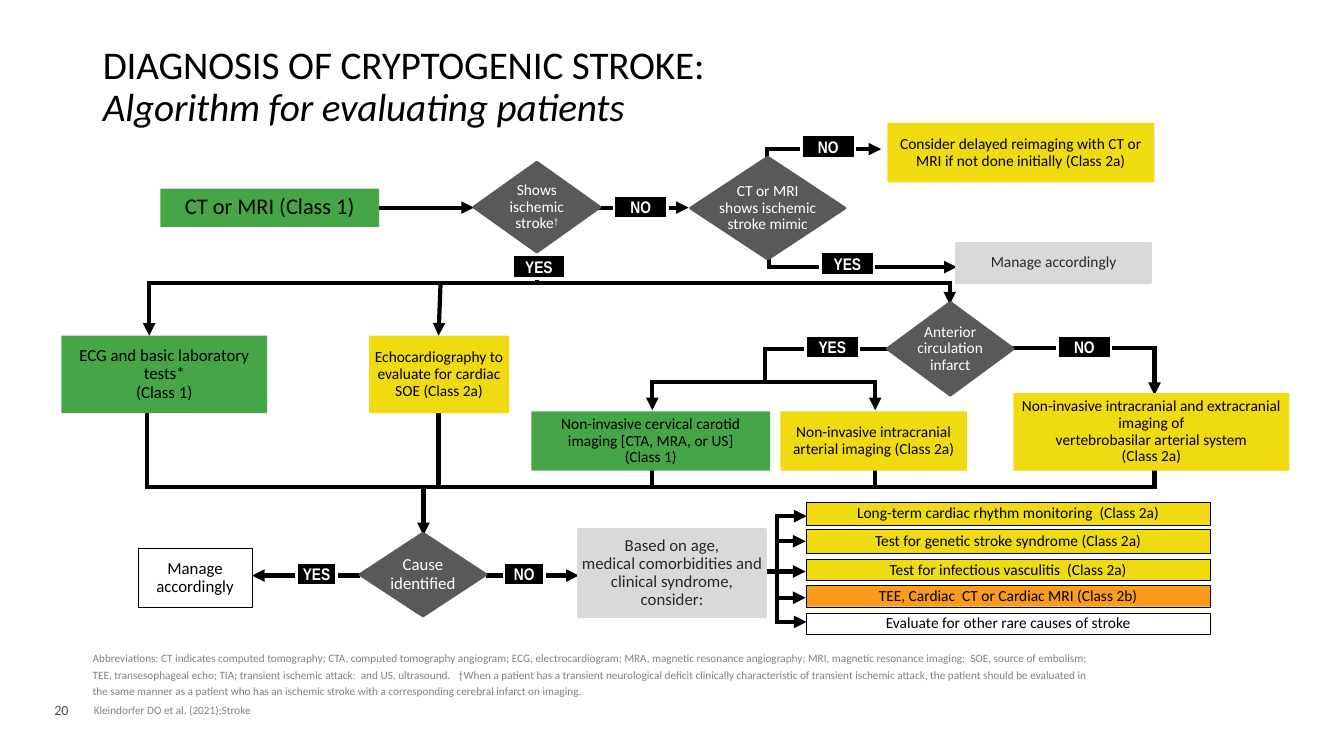
from lxml.etree import SubElement
from pptx import Presentation
from pptx.dml.color import RGBColor
from pptx.enum.shapes import MSO_CONNECTOR as Link, MSO_SHAPE as Kind
from pptx.enum.text import MSO_ANCHOR as Anchor, MSO_AUTO_SIZE as Fit, PP_ALIGN as Align
from pptx.oxml.ns import qn
from pptx.util import Inches, Pt

BLACK, WHITE, DARK, INK = "000000", "FFFFFF", "595959", "292929"
GREEN, YELLOW, ORANGE, GREY = "46A547", "F0DB10", "F99B1D", "D9D9D9"

BOXES = [
    ("CT or MRI (Class 1)", (1.59, 1.87, 2.17, 0.38), GREEN, 16),
    ("Consider delayed reimaging with CT or MRI if not done initially (Class 2a)",
     (8.8, 1.22, 2.65, 0.59), YELLOW, 11),
    ("ECG and basic laboratory tests*\n(Class 1)", (0.61, 3.33, 2.04, 0.77), GREEN, 12),
    ("Echocardiography to evaluate for cardiac SOE (Class 2a)",
     (3.66, 3.33, 1.39, 0.77), YELLOW, 11),
    ("Non-invasive cervical carotid\nimaging [CTA, MRA, or US]\n(Class 1)",
     (5.27, 4.08, 2.37, 0.59), GREEN, 11),
    ("Non-invasive intracranial arterial imaging (Class 2a)",
     (7.74, 4.08, 1.85, 0.59), YELLOW, 11),
    ("Non-invasive intracranial and extracranial imaging of\n"
     "vertebrobasilar arterial system\n(Class 2a)", (10.05, 3.9, 2.74, 0.77), YELLOW, 11),
]
ACTIONS = [
    ("Manage accordingly", (9.49, 2.41, 1.92, 0.39), 11),
    ("Based on age,\nmedical comorbidities and clinical syndrome, consider:",
     (5.74, 5.25, 1.85, 0.87), 12),
]
TESTS = [
    ("Long-term cardiac rhythm monitoring  (Class 2a)", 4.98, 0.23, YELLOW),
    ("Test for genetic stroke syndrome (Class 2a)", 5.25, 0.24, YELLOW),
    ("Test for infectious vasculitis  (Class 2a)", 5.55, 0.21, YELLOW),
    ("TEE, Cardiac  CT or Cardiac MRI (Class 2b)", 5.81, 0.21, ORANGE),
    ("Evaluate for other rare causes of stroke", 6.08, 0.21, None),
]
CHOICES = [
    ("Shows\nischemic\nstroke", (4.7, 1.61, 1.25, 0.89), 11, "†"),
    ("CT or MRI\nshows ischemic\nstroke mimic", (6.85, 1.56, 1.53, 1.01), 11, ""),
    ("Anterior\ncirculation\ninfarct", (8.8, 3, 1.25, 0.92), 11, ""),
    ("Cause\nidentified", (3.57, 5.29, 1.25, 0.82), 12, ""),
]
TAGS = [
    ("NO", 6.09, 1.94, 0.53), ("NO", 7.95, 1.34, 0.53), ("YES", 8.14, 2.5, 0.53),
    ("YES", 5.08, 2.53, 0.53), ("YES", 7.99, 3.33, 0.53), ("NO", 10.49, 3.33, 0.53),
    ("YES", 2.94, 5.58, 0.4), ("NO", 5, 5.58, 0.4),
]
ARROWS = [
    [(3.76, 2.06), (4.7, 2.06)],
    [(5.9, 2.06), (6.83, 2.06)],
    [(7.61, 1.61), (7.61, 1.48), (8.74, 1.48)],
    [(7.63, 1.99), (7.63, 2.65), (9.49, 2.65)],
    [(5.35, 2.81), (1.48, 2.81), (1.48, 3.33)],
    [(5.35, 2.81), (9.42, 2.81), (9.42, 3.02)],
    [(4.37, 2.81), (4.35, 3.33)],
    [(9.93, 3.45), (11.45, 3.45), (11.45, 3.92)],
    [(4.2, 4.83), (4.2, 5.31)],
    [(3.57, 5.71), (2.5, 5.71)],
    [(4.82, 5.71), (5.74, 5.71)],
] + [[(7.71, y), (7.99, y)] for y in (5.37, 5.67, 5.93)]
FORKS = [
    [(6.47, 4.07), (6.47, 3.79), (8.68, 3.79), (8.68, 4.07)],
    [(8, 5.12), (7.71, 5.12), (7.71, 6.17), (8, 6.17)],
]
PLAIN = [
    [(5.33, 2.65), (5.33, 2.81)],
    [(8.84, 3.46), (7.59, 3.46), (7.59, 3.79)],
    [(1.46, 3.58), (1.46, 4.83), (11.45, 4.83), (11.45, 3.92)],
    [(4.35, 4.08), (4.35, 4.83)],
    [(6.47, 4.58), (6.47, 4.83)],
    [(8.68, 4.63), (8.68, 4.83)],
    [(7.07, 5.67), (7.72, 5.67)],
]
NOTE = (
    "Abbreviations: CT indicates computed tomography; CTA, computed tomography angiogram; "
    "ECG, electrocardiogram; MRA, magnetic resonance angiography; MRI, magnetic resonance "
    "imaging;  SOE, source of embolism; TEE, transesophageal echo; TIA; transient ischemic "
    "attack:  and US, ultrasound.   †When a patient has a transient neurological deficit "
    "clinically characteristic of transient ischemic attack, the patient should be evaluated "
    "in the same manner as a patient who has an ischemic stroke with a corresponding cerebral "
    "infarct on imaging."
)


def paint(target, color):
    target.solid()
    target.fore_color.rgb = RGBColor.from_string(color)


def place(shape, at):
    shape.left, shape.top, shape.width, shape.height = map(Inches, at)


def text(shape, words, size=11, color=BLACK, font="Calibri", bold=False, align=Align.CENTER,
         anchor=Anchor.MIDDLE, space=0.9, wrap=True, inset=(0, 0), mark=""):
    frame = shape.text_frame
    frame.auto_size = Fit.NONE
    frame.word_wrap = wrap
    frame.vertical_anchor = anchor
    frame.margin_left = frame.margin_right = Inches(inset[0])
    frame.margin_top = frame.margin_bottom = Inches(inset[1])
    frame.text = words
    if mark:
        frame.paragraphs[-1].add_run().text = mark
    for para in frame.paragraphs:
        para.alignment = align
        para.line_spacing = space
        for run in para.runs:
            run.font.name = font
            run.font.size = Pt(size)
            run.font.bold = bold
            paint(run.font.fill, color)
    if mark:
        run.font._element.set("baseline", "30000")
    return frame


def box(slide, words, at, fill=None, edge=None, width=2, kind=Kind.RECTANGLE, **form):
    shape = slide.shapes.add_shape(kind, *map(Inches, at))
    shape.shadow.inherit = False
    if fill:
        paint(shape.fill, fill)
    else:
        shape.fill.background()
    if edge:
        paint(shape.line.fill, edge)
        shape.line.width = Pt(width)
    else:
        shape.line.fill.background()
    text(shape, words, **form)


def note(slide, words, at, **form):
    text(slide.shapes.add_textbox(*map(Inches, at)), words, align=Align.LEFT, **form)


def link(slide, points, *ends):
    spots = [(Inches(x), Inches(y)) for x, y in points]
    if len(spots) == 2:
        line = slide.shapes.add_connector(Link.STRAIGHT, *spots[0], *spots[1])
    else:
        pen = slide.shapes.build_freeform(*spots[0])
        pen.add_line_segments(spots[1:], close=False)
        line = pen.convert_to_shape()
        line.fill.background()
    paint(line.line.fill, BLACK)
    line.line.width = Pt(3)
    props = line._element.spPr
    stroke = props.find(qn("a:ln"))
    SubElement(stroke, qn("a:miter"), lim="800000")
    for end in ends:
        SubElement(stroke, qn(end), type="triangle")
    SubElement(props, qn("a:effectLst"))


def main():
    deck = Presentation()
    deck.slide_width, deck.slide_height = Inches(13.33), Inches(7.5)
    slide = deck.slides.add_slide(deck.slide_layouts[5])

    title = slide.shapes.title
    place(title, (0.92, 0.4, 11.5, 0.61))
    frame = text(title, "DIAGNOSIS OF CRYPTOGENIC STROKE:\vAlgorithm for evaluating patients",
                 size=28, align=Align.LEFT, anchor=Anchor.TOP, wrap=False, inset=(0.1, 0.05))
    runs = frame.paragraphs[0].runs
    runs[-1].font.italic = True
    for run in runs:
        run.font._element.set("spc", "-10")

    for points in PLAIN:
        link(slide, points)
    for points in FORKS:
        link(slide, points, "a:headEnd", "a:tailEnd")
    for points in ARROWS:
        link(slide, points, "a:tailEnd")
    for words, at, fill, size in BOXES:
        box(slide, words, at, fill, size=size)
    for words, at, size in ACTIONS:
        box(slide, words, at, GREY, GREY, size=size, color=INK)
    box(slide, "Manage accordingly", (1.37, 5.44, 1.13, 0.58), WHITE, BLACK, 0.25, size=12)
    for words, top, height, fill in TESTS:
        box(slide, words, (8, top, 4, height), fill, BLACK, 0.25)
    for words, at, size, mark in CHOICES:
        box(slide, words, at, DARK, DARK, kind=Kind.DIAMOND, size=size, color=WHITE,
            wrap=False, mark=mark)
    for words, left, top, width in TAGS:
        box(slide, words, (left, top, width, 0.23), BLACK, WHITE, size=12, color=WHITE,
            font="Arial Narrow", bold=True, space=1)

    note(slide, NOTE, (0.82, 6.39, 10.25, 0.58), size=8, color="808080", space=1.2,
         anchor=Anchor.TOP, inset=(0.1, 0.05))
    note(slide, "Kleindorfer DO et al. (2021);Stroke", (0.93, 6.98, 9.38, 0.13), size=8,
         color="808080", space=1, anchor=Anchor.TOP)
    note(slide, "20", (0.44, 6.91, 0.39, 0.27), size=10, color="4D4D4F", space=1,
         wrap=False, inset=(0.1, 0.05))
    deck.save("out.pptx")


if __name__ == "__main__":
    main()
